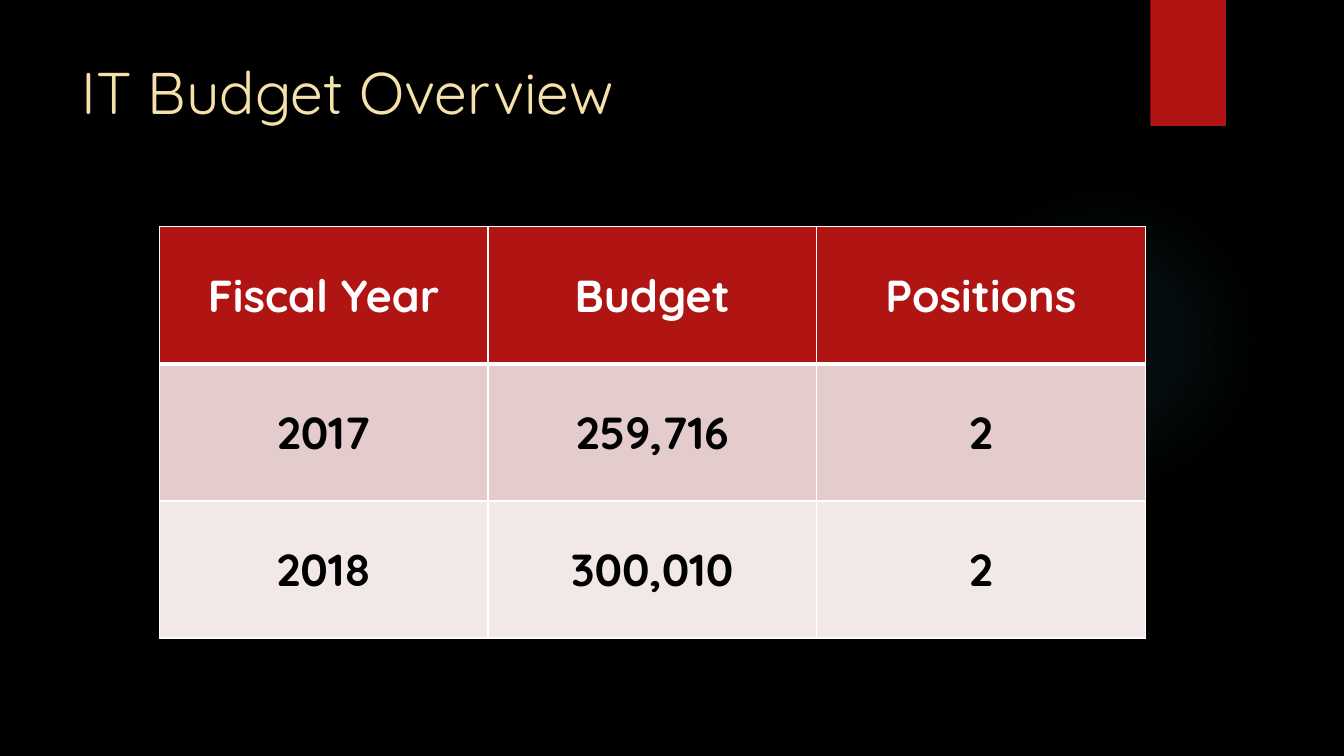
from lxml import etree
from pptx import Presentation
from pptx.dml.color import RGBColor
from pptx.enum.shapes import MSO_SHAPE
from pptx.enum.text import MSO_ANCHOR, PP_ALIGN
from pptx.oxml import parse_xml
from pptx.oxml.ns import nsdecls, qn
from pptx.util import Inches, Pt

TOP, MIDDLE = MSO_ANCHOR.TOP, MSO_ANCHOR.MIDDLE
LEFT, CENTER = PP_ALIGN.LEFT, PP_ALIGN.CENTER
OVAL, RECTANGLE = MSO_SHAPE.OVAL, MSO_SHAPE.RECTANGLE

TITLE = "IT Budget Overview"
BUDGET_ROWS = [
    ("Fiscal Year", "Budget", "Positions"),
    ("2017", "259,716", "2"),
    ("2018", "300,010", "2"),
]
COLORS = {
    "background": "000000",
    "glow": "50B9C1",
    "red": "B01513",
    "title": "F5E2A9",
    "white": "FFFFFF",
    "black": "000000",
    "row_dark": "E4CCCC",
    "row_light": "F2E8E7",
}
ROW_STYLES = [("red", "white"), ("row_dark", "black"), ("row_light", "black")]
GLOW_STOPS = [(0, 7), (36, 6), (69, 0)]
FONT = "Quicksand"
COLUMN_WIDTH, ROW_HEIGHT = 3.26, 1.36
THIN, THICK = 1, 3


def rgb(name):
    return RGBColor.from_string(COLORS[name])


def write_text(text_frame, text, size, color, bold=False, align=LEFT):
    paragraph = text_frame.paragraphs[0]
    paragraph.alignment = align
    run = paragraph.add_run()
    run.text = text
    run.font.name = FONT
    run.font.size = Pt(size)
    run.font.bold = bold
    run.font.color.rgb = rgb(color)


def add_plain_shape(slide, kind, left, top, width, height, color):
    shape = slide.shapes.add_shape(
        kind, Inches(left), Inches(top), Inches(width), Inches(height))
    shape.shadow.inherit = False
    shape.fill.solid()
    shape.fill.fore_color.rgb = rgb(color)
    shape.line.fill.background()
    return shape


def set_glow(shape):
    stops = "".join(
        f'<a:gs pos="{position * 1000}"><a:srgbClr val="{COLORS["glow"]}">'
        f'<a:alpha val="{opacity * 1000}"/></a:srgbClr></a:gs>'
        for position, opacity in GLOW_STOPS)
    gradient = parse_xml(
        f'<a:gradFill {nsdecls("a")}><a:gsLst>{stops}</a:gsLst>'
        '<a:path path="circle"><a:fillToRect l="50000" t="50000" r="50000" b="50000"/>'
        '</a:path></a:gradFill>')
    properties = shape.element.spPr
    properties.replace(properties.find(qn("a:solidFill")), gradient)


def set_borders(cell, top, bottom):
    properties = cell._tc.get_or_add_tcPr()
    sides = [("lnL", THIN), ("lnR", THIN), ("lnT", top), ("lnB", bottom)]
    for index, (side, width) in enumerate(sides):
        line = etree.Element(qn(f"a:{side}"), w=str(Pt(width)))
        fill = etree.SubElement(line, qn("a:solidFill"))
        etree.SubElement(fill, qn("a:srgbClr"), val=COLORS["white"])
        properties.insert(index, line)


def add_budget_table(slide, left, top):
    row_count, column_count = len(BUDGET_ROWS), len(BUDGET_ROWS[0])
    table = slide.shapes.add_table(
        row_count, column_count, Inches(left), Inches(top),
        Inches(COLUMN_WIDTH * column_count), Inches(ROW_HEIGHT * row_count)).table
    for column in table.columns:
        column.width = Inches(COLUMN_WIDTH)
    for row_index, (values, style) in enumerate(zip(BUDGET_ROWS, ROW_STYLES)):
        table.rows[row_index].height = Inches(ROW_HEIGHT)
        fill_color, text_color = style
        for column_index, value in enumerate(values):
            cell = table.cell(row_index, column_index)
            cell.vertical_anchor = MIDDLE
            cell.fill.solid()
            cell.fill.fore_color.rgb = rgb(fill_color)
            set_borders(cell, top=THICK if row_index == 1 else THIN,
                        bottom=THICK if row_index == 0 else THIN)
            write_text(cell.text_frame, value, size=32, color=text_color,
                       bold=True, align=CENTER)


def main():
    presentation = Presentation()
    presentation.slide_width = Inches(13.33)
    presentation.slide_height = Inches(7.5)
    slide = presentation.slides.add_slide(presentation.slide_layouts[5])
    slide.background.fill.solid()
    slide.background.fill.fore_color.rgb = rgb("background")

    set_glow(add_plain_shape(slide, OVAL, 9.41, 1.83, 3.08, 3.08, "glow"))
    add_plain_shape(slide, RECTANGLE, 11.41, 0, 0.75, 1.25, "red")

    title = slide.shapes.title
    title.left, title.top = Inches(0.71), Inches(0.5)
    title.width, title.height = Inches(10.28), Inches(1.53)
    title.text_frame.vertical_anchor = TOP
    write_text(title.text_frame, TITLE, size=42, color="title")

    add_budget_table(slide, 1.58, 2.25)
    presentation.save("out.pptx")


if __name__ == "__main__":
    main()
